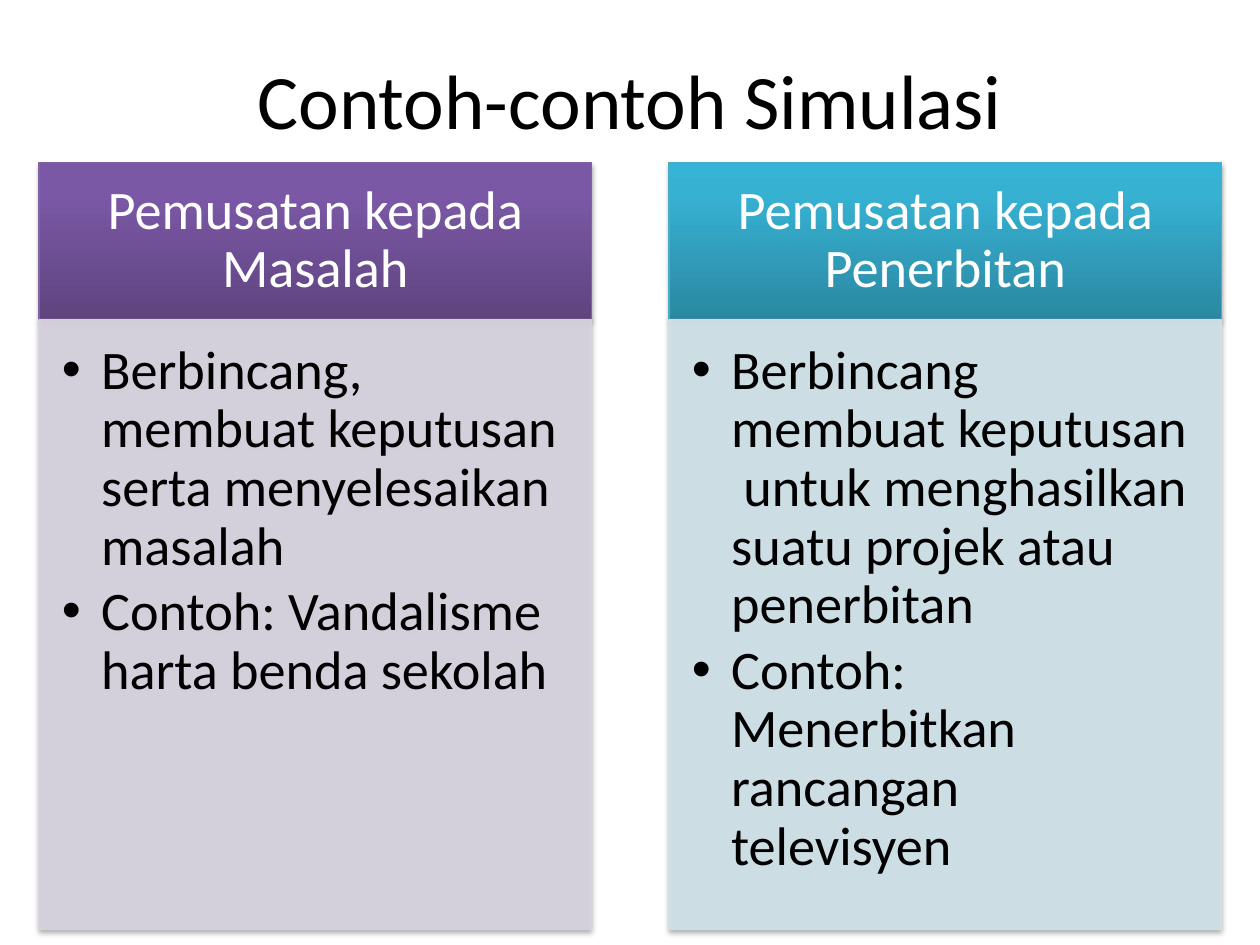
from lxml.etree import SubElement
from pptx import Presentation
from pptx.dml.color import RGBColor
from pptx.enum.shapes import MSO_SHAPE
from pptx.enum.text import MSO_ANCHOR, PP_ALIGN
from pptx.oxml import parse_xml
from pptx.oxml.ns import nsdecls, qn
from pptx.util import Cm, Pt

BLACK = RGBColor(0x00, 0x00, 0x00)
WHITE = RGBColor(0xFF, 0xFF, 0xFF)
PURPLE = RGBColor(0x80, 0x64, 0xA2)
PURPLE_STOPS = ((0, RGBColor(0x5F, 0x44, 0x80)), (80, RGBColor(0x7B, 0x58, 0xA6)),
                (100, RGBColor(0x7C, 0x57, 0xA8)))
PALE_PURPLE = RGBColor(0xD8, 0xD3, 0xE0)
AQUA = RGBColor(0x4B, 0xAC, 0xC6)
AQUA_STOPS = ((0, RGBColor(0x2A, 0x88, 0xA2)), (80, RGBColor(0x37, 0xB1, 0xD2)),
              (100, RGBColor(0x34, 0xB4, 0xD6)))
PALE_AQUA = RGBColor(0xD0, 0xE3, 0xEA)

COLUMNS = (
    ("Pemusatan kepada Masalah", PURPLE, PURPLE_STOPS, PALE_PURPLE,
     ("Berbincang, membuat keputusan serta menyelesaikan masalah",
      "Contoh: Vandalisme harta benda sekolah")),
    ("Pemusatan kepada Penerbitan", AQUA, AQUA_STOPS, PALE_AQUA,
     ("Berbincang membuat keputusan  untuk menghasilkan suatu projek atau penerbitan",
      "Contoh: Menerbitkan rancangan televisyen")),
)


def write(shape, paragraphs, size, color=BLACK, align=PP_ALIGN.LEFT, anchor=MSO_ANCHOR.TOP,
          insets=(0.25, 0.13, 0.25, 0.13), spacing=None, after=None, bullet_indent=None):
    frame = shape.text_frame
    frame.word_wrap = True
    frame.vertical_anchor = anchor
    frame.margin_left, frame.margin_top, frame.margin_right, frame.margin_bottom = map(Cm, insets)
    for index, text in enumerate(paragraphs):
        paragraph = frame.paragraphs[0] if index == 0 else frame.add_paragraph()
        paragraph.alignment = align
        paragraph.line_spacing = spacing
        paragraph.space_after = after
        if bullet_indent:
            properties = paragraph._p.get_or_add_pPr()
            properties.set("marL", str(bullet_indent))
            properties.set("indent", str(-bullet_indent))
            SubElement(properties, qn("a:buFont"), typeface="Arial")
            SubElement(properties, qn("a:buChar"), char="•")
        run = paragraph.add_run()
        run.text = text
        run.font.name = "Calibri"
        run.font.size = Pt(size)
        run.font.color.rgb = color


def fill_gradient(shape, stops):
    marks = "".join(f'<a:gs pos="{position * 1000}"><a:srgbClr val="{color}"/></a:gs>'
                    for position, color in stops)
    properties = shape._element.spPr
    properties.find(qn("a:prstGeom")).addnext(parse_xml(
        f'<a:gradFill {nsdecls("a")} rotWithShape="1"><a:gsLst>{marks}</a:gsLst>'
        '<a:lin ang="16200000" scaled="0"/></a:gradFill>'))


def make_translucent(color_format_parent):
    for color in color_format_parent.iter(qn("a:srgbClr")):
        SubElement(color, qn("a:alpha"), val="90000")


def add_panel(slide, left, top, width, height, line_color):
    panel = slide.shapes.add_shape(MSO_SHAPE.RECTANGLE, left, top, width, height)
    panel.line.color.rgb = line_color
    panel.line.width = Pt(0.75)
    panel.shadow.inherit = False
    panel._element.spPr.find(qn("a:effectLst")).append(parse_xml(
        f'<a:outerShdw {nsdecls("a")} blurRad="{Pt(3.1)}" dist="{Pt(1.8)}" dir="5400000" '
        'rotWithShape="0"><a:srgbClr val="000000"><a:alpha val="35000"/></a:srgbClr>'
        '</a:outerShdw>'))
    return panel


def add_title(slide, left, top, width, height):
    title = slide.shapes.add_textbox(left, top, width, height)
    write(title, ["Contoh-contoh Simulasi"], 44, align=PP_ALIGN.CENTER, anchor=MSO_ANCHOR.MIDDLE)


def add_column(slide, left, top, width, height, heading, line_color, stops, pale, points):
    heading_height = Cm(3.16)
    header = add_panel(slide, left, top, width, heading_height, line_color)
    fill_gradient(header, stops)
    write(header, [heading], 31, color=WHITE, align=PP_ALIGN.CENTER, anchor=MSO_ANCHOR.MIDDLE,
          insets=(0.61, 0.35, 0.61, 0.35), spacing=0.9)

    body = add_panel(slide, left, top + heading_height, width, height - heading_height, pale)
    body.fill.solid()
    body.fill.fore_color.rgb = pale
    properties = body._element.spPr
    make_translucent(properties.find(qn("a:solidFill")))
    make_translucent(properties.find(qn("a:ln")))
    write(body, points, 31, insets=(0.46, 0.46, 0.61, 0.69), spacing=0.9, after=Pt(4),
          bullet_indent=Cm(0.79))


def main():
    presentation = Presentation()
    presentation.slide_width = Cm(25.4)
    presentation.slide_height = Cm(19.05)
    slide = presentation.slides.add_slide(presentation.slide_layouts[6])
    add_title(slide, Cm(1.27), Cm(0.41), Cm(22.86), Cm(3.18))
    for index, column in enumerate(COLUMNS):
        add_column(slide, Cm(0.79 + index * 12.7), Cm(3.28), Cm(11.13), Cm(15.46), *column)
    presentation.save("out.pptx")


if __name__ == "__main__":
    main()
